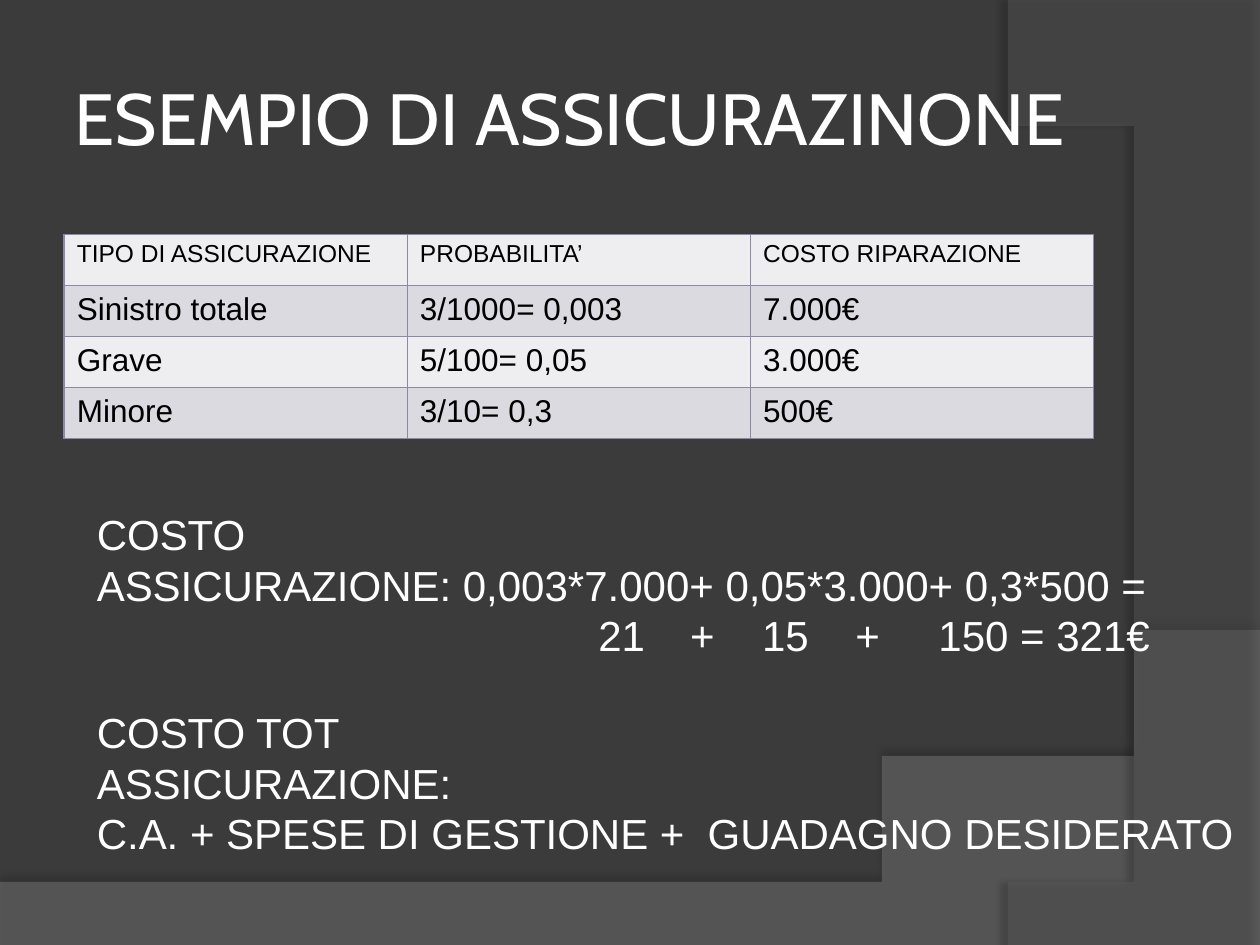
from lxml.etree import SubElement
from pptx import Presentation
from pptx.dml.color import RGBColor
from pptx.enum.text import MSO_ANCHOR as Anchor, PP_ALIGN as Align
from pptx.oxml import parse_xml
from pptx.oxml.ns import nsdecls, qn
from pptx.util import Inches, Pt

WIDTH, HEIGHT = 10, 7.5
BACKGROUND, WHITE, BLACK = "3B3B3B", "FFFFFF", "000000"
BORDER = "8D89A4"
ROW_FILLS = ["EEEDF0", "DBDAE0"]

TITLE = "ESEMPIO DI ASSICURAZINONE "
ROWS = [
    ("TIPO DI ASSICURAZIONE", "PROBABILITA’", "COSTO RIPARAZIONE"),
    ("Sinistro totale", "3/1000= 0,003", "7.000€"),
    ("Grave", "5/100= 0,05", "3.000€"),
    ("Minore", "3/10= 0,3", "500€"),
]
COST = [
    "COSTO",
    "ASSICURAZIONE: 0,003*7.000+ 0,05*3.000+ 0,3*500 =",
    "\t21\t+\t15\t+\t150 = 321€",
]
COST_TABS = [3.98, 4.71, 5.28, 6.02, 6.68]
TOTAL = [
    "COSTO TOT",
    "ASSICURAZIONE:",
    "C.A. + SPESE DI GESTIONE +  GUADAGNO DESIDERATO",
]

WAVES = [
    {
        "curve": [(10, 5.2), (5.59, 7.29), (3.91, 7.19), (0, 7.05)],
        "corners": [(0, HEIGHT), (WIDTH, HEIGHT)],
        "fill": "7F7F7F", "opacity": 45,
        "shadow": {"opacity": 35, "distance": 3.5, "angle": 270},
    },
    {
        "curve": [(8.21, 7.5), (9.35, 6.19), (10.18, 3), (8, 0)],
        "corners": [(WIDTH, 0.02), (WIDTH, HEIGHT)],
        "fill": "5E5E5E", "opacity": 40,
        "shadow": {"opacity": 45, "distance": 4, "angle": 180},
    },
]


def rgb(value):
    return RGBColor.from_string(value)


def style(para, font, size, colour):
    para.font.name = font
    para.font.size = Pt(size)
    para.font.color.rgb = rgb(colour)


def bezier(start, first, second, end, steps=60):
    points = []
    for step in range(steps + 1):
        t = step / steps
        weights = ((1 - t) ** 3, 3 * t * (1 - t) ** 2, 3 * t * t * (1 - t), t ** 3)
        points.append(tuple(
            sum(weight * value for weight, value in zip(weights, values))
            for values in zip(start, first, second, end)
        ))
    return points


def add_wave(slide, wave):
    points = bezier(*wave["curve"]) + wave["corners"]
    builder = slide.shapes.build_freeform(*points[0], scale=Inches(1))
    builder.add_line_segments(points[1:], close=True)
    shape = builder.convert_to_shape()
    shape.fill.solid()
    shape.fill.fore_color.rgb = rgb(wave["fill"])
    shape.line.fill.background()
    properties = shape._element.spPr
    colour = properties.find(qn("a:solidFill"))[0]
    SubElement(colour, qn("a:alpha"), val=str(wave["opacity"] * 1000))
    shadow = wave["shadow"]
    properties.append(parse_xml(
        f'<a:effectLst {nsdecls("a")}><a:outerShdw blurRad="{Pt(4)}" '
        f'dist="{Pt(shadow["distance"])}" dir="{shadow["angle"] * 60000}" '
        f'algn="ctr" rotWithShape="0"><a:srgbClr val="{BLACK}">'
        f'<a:alpha val="{shadow["opacity"] * 1000}"/>'
        '</a:srgbClr></a:outerShdw></a:effectLst>'
    ))


def add_text(slide, lines, left, top, width, height, font, size):
    box = slide.shapes.add_textbox(*map(Inches, (left, top, width, height)))
    frame = box.text_frame
    frame.word_wrap = True
    frame.text = "\n".join(lines)
    for para in frame.paragraphs:
        style(para, font, size, WHITE)
    return frame


def add_tabs(para, stops):
    tab_list = parse_xml(f'<a:tabLst {nsdecls("a")}/>')
    for stop in stops:
        SubElement(tab_list, qn("a:tab"), pos=str(Inches(stop)), algn="l")
    para._p.get_or_add_pPr().insert(0, tab_list)


def add_costs(slide):
    columns = len(ROWS[0])
    frame = slide.shapes.add_table(
        len(ROWS), columns, Inches(0.51), Inches(1.86), Inches(8.17), Inches(1.62))
    for row, texts in enumerate(ROWS):
        for column, text in enumerate(texts):
            cell = frame.table.cell(row, column)
            cell.text = text
            style(cell.text_frame.paragraphs[0], "Arial", 18 if row else 14, BLACK)
            properties = cell._tc.get_or_add_tcPr()
            for side in ("lnL", "lnR", "lnT", "lnB"):
                properties.append(parse_xml(
                    f'<a:{side} {nsdecls("a")} w="{Pt(1)}"><a:solidFill>'
                    f'<a:srgbClr val="{BORDER}"/></a:solidFill></a:{side}>'))
            cell.fill.solid()
            cell.fill.fore_color.rgb = rgb(ROW_FILLS[row % 2])


def main():
    deck = Presentation()
    deck.slide_width, deck.slide_height = Inches(WIDTH), Inches(HEIGHT)
    slide = deck.slides.add_slide(deck.slide_layouts[6])
    slide.background.fill.solid()
    slide.background.fill.fore_color.rgb = rgb(BACKGROUND)

    for wave in WAVES:
        add_wave(slide, wave)

    title = add_text(slide, [TITLE], 0.5, 0.3, 8.17, 1.25, "Cabin", 41.4)
    title.vertical_anchor = Anchor.MIDDLE
    title.margin_left = title.margin_right = Inches(0.05)
    title.paragraphs[0].alignment = Align.CENTER

    add_costs(slide)
    cost = add_text(slide, COST, 0.67, 3.99, 8.6, 1.31, "Arial", 24)
    add_tabs(cost.paragraphs[-1], COST_TABS)
    add_text(slide, TOTAL, 0.67, 5.56, 9.33, 1.31, "Arial", 24)
    deck.save("out.pptx")


if __name__ == "__main__":
    main()
